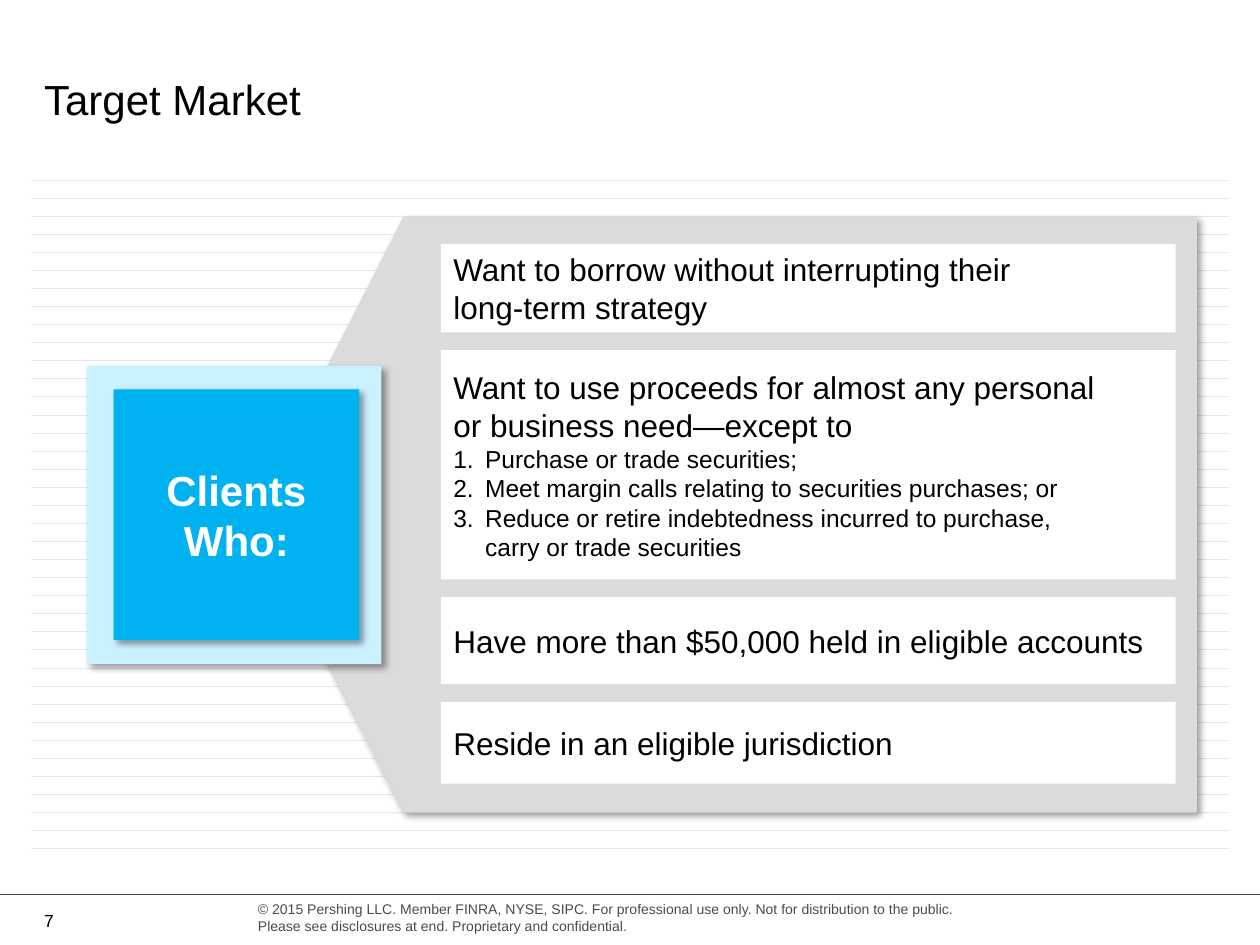
from dataclasses import dataclass

from lxml import etree
from pptx import Presentation
from pptx.dml.color import RGBColor
from pptx.enum.shapes import MSO_CONNECTOR, MSO_SHAPE
from pptx.enum.text import MSO_ANCHOR, PP_ALIGN
from pptx.oxml import parse_xml
from pptx.oxml.ns import nsdecls, qn
from pptx.util import Cm, Pt

RECT, PLATE = MSO_SHAPE.RECTANGLE, MSO_SHAPE.PENTAGON
LINE = MSO_CONNECTOR.STRAIGHT
TOP, MID = MSO_ANCHOR.TOP, MSO_ANCHOR.MIDDLE
LEFT, MIDST = PP_ALIGN.LEFT, PP_ALIGN.CENTER


@dataclass(frozen=True)
class Theme:
    font: str = "Arial"
    ink: str = "000000"
    white: str = "FFFFFF"
    rule: str = "4B4B4B"
    stripe: str = "E2E5F2"
    plate: str = "DBDBDB"
    frame: str = "C9F1FF"
    tile: str = "00B2EF"
    head: int = 24
    body: int = 18
    item: int = 14
    page: int = 10
    foot: int = 8


THEME = Theme()


@dataclass(frozen=True)
class Box:
    """Left, top, width and height in centimetres."""
    x: float
    y: float
    w: float
    h: float

    def place(self) -> tuple:
        return Cm(self.x), Cm(self.y), Cm(self.w), Cm(self.h)


@dataclass(frozen=True)
class Para:
    text: str
    size: int = THEME.body
    color: str = THEME.ink
    bold: bool = False
    align: PP_ALIGN = LEFT
    number: bool = False


@dataclass(frozen=True)
class Card:
    height: float
    paras: tuple[Para, ...]


CARDS = (
    Card(1.78, (Para("Want to borrow without interrupting their \nlong-term strategy"),)),
    Card(4.62, (
        Para("Want to use proceeds for almost any personal \nor business need—except to"),
        Para("Purchase or trade securities;", THEME.item, number=True),
        Para("Meet margin calls relating to securities purchases; or", THEME.item, number=True),
        Para("Reduce or retire indebtedness incurred to purchase, \ncarry or trade securities",
             THEME.item, number=True),
    )),
    Card(1.75, (Para("Have more than $50,000 held in eligible accounts"),)),
    Card(1.65, (Para("Reside in an eligible jurisdiction"),)),
)
FOOT = ("© 2015 Pershing LLC. Member FINRA, NYSE, SIPC. For professional use only. "
        "Not for distribution to the public. \n"
        "Please see disclosures at end. Proprietary and confidential.")


def rgb(code: str) -> RGBColor:
    return RGBColor.from_string(code)


def write(frame, paras: tuple[Para, ...], anchor, inset=(0.25, 0.13, 0.25, 0.13), wrap=True) -> None:
    """Fill a text frame; insets run left, top, right, bottom in centimetres."""
    frame.word_wrap = wrap
    frame.vertical_anchor = anchor
    (frame.margin_left, frame.margin_top,
     frame.margin_right, frame.margin_bottom) = map(Cm, inset)
    for i, para in enumerate(paras):
        line = frame.add_paragraph() if i else frame.paragraphs[0]
        line.alignment = para.align
        if para.number:
            props = line._p.get_or_add_pPr()
            props.set("marL", str(Cm(0.64)))
            props.set("indent", str(-Cm(0.64)))
            etree.SubElement(props, qn("a:buAutoNum"), type="arabicPeriod")
        for j, part in enumerate(para.text.split("\n")):
            if j:
                line.add_line_break()
            run = line.add_run()
            run.text = part
            font = run.font
            font.name, font.size, font.bold = THEME.font, Pt(para.size), para.bold
            font.color.rgb = rgb(para.color)


def label(slide, box: Box, para: Para, anchor=TOP, **style) -> None:
    write(slide.shapes.add_textbox(*box.place()).text_frame, (para,), anchor, **style)


def panel(slide, box: Box, fill: str, kind=RECT, shade=False):
    shape = slide.shapes.add_shape(kind, *box.place())
    shape.shadow.inherit = False
    shape.fill.solid()
    shape.fill.fore_color.rgb = rgb(fill)
    shape.line.fill.background()
    if shade:
        glow = shape._element.spPr.find(qn("a:effectLst"))
        glow.append(parse_xml(
            f'<a:outerShdw {nsdecls("a")} blurRad="{Pt(4)}" dist="{Pt(3)}" dir="2700000" '
            'algn="tl" rotWithShape="0"><a:srgbClr val="000000">'
            '<a:alpha val="40000"/></a:srgbClr></a:outerShdw>'))
    return shape


def rule(slide, left: float, right: float, y: float, color: str, width: float) -> None:
    line = slide.shapes.add_connector(LINE, Cm(left), Cm(y), Cm(right), Cm(y))
    line.line.color.rgb = rgb(color)
    line.line.width = Pt(width)
    etree.SubElement(line._element.spPr, qn("a:effectLst"))


def main() -> None:
    deck = Presentation()
    deck.slide_width, deck.slide_height = Cm(25.4), Cm(19.05)
    slide = deck.slides.add_slide(deck.slide_layouts[6])

    label(slide, Box(0.64, 18.08, 1.14, 0.97), Para("7", THEME.page), MID, wrap=False)
    label(slide, Box(4.95, 18.03, 16.74, 0.94), Para(FOOT, THEME.foot, THEME.rule))
    rule(slide, 0, 25.4, 18.03, THEME.rule, 1)

    first, last, count = 3.63, 17.11, 38
    for i in range(count):
        y = first + i * (last - first) / (count - 1)
        rule(slide, 0.64, 24.77, y, THEME.stripe, 0.5)

    plate = panel(slide, Box(5.08, 4.37, 19.05, 12.01), THEME.plate, PLATE, shade=True)
    plate.adjustments[0] = 0.254
    plate._element.spPr.xfrm.set("flipH", "1")

    top, gap = 4.92, 0.36
    for card in CARDS:
        shape = panel(slide, Box(8.89, top, 14.81, card.height), THEME.white)
        write(shape.text_frame, card.paras, MID, inset=(0.25, 0.13, 0.13, 0.13))
        top += card.height + gap

    panel(slide, Box(1.75, 7.37, 5.94, 6.02), THEME.frame, shade=True)
    tile = panel(slide, Box(2.29, 7.85, 4.95, 5.05), THEME.tile, shade=True)
    write(tile.text_frame,
          (Para("Clients\nWho:", THEME.head, THEME.white, True, MIDST),), MID)

    label(slide, Box(0.64, 1.27, 24.13, 1.17), Para("Target Market", THEME.head),
          inset=(0.25, 0.22, 0.25, 0))
    deck.save("out.pptx")


if __name__ == "__main__":
    main()
